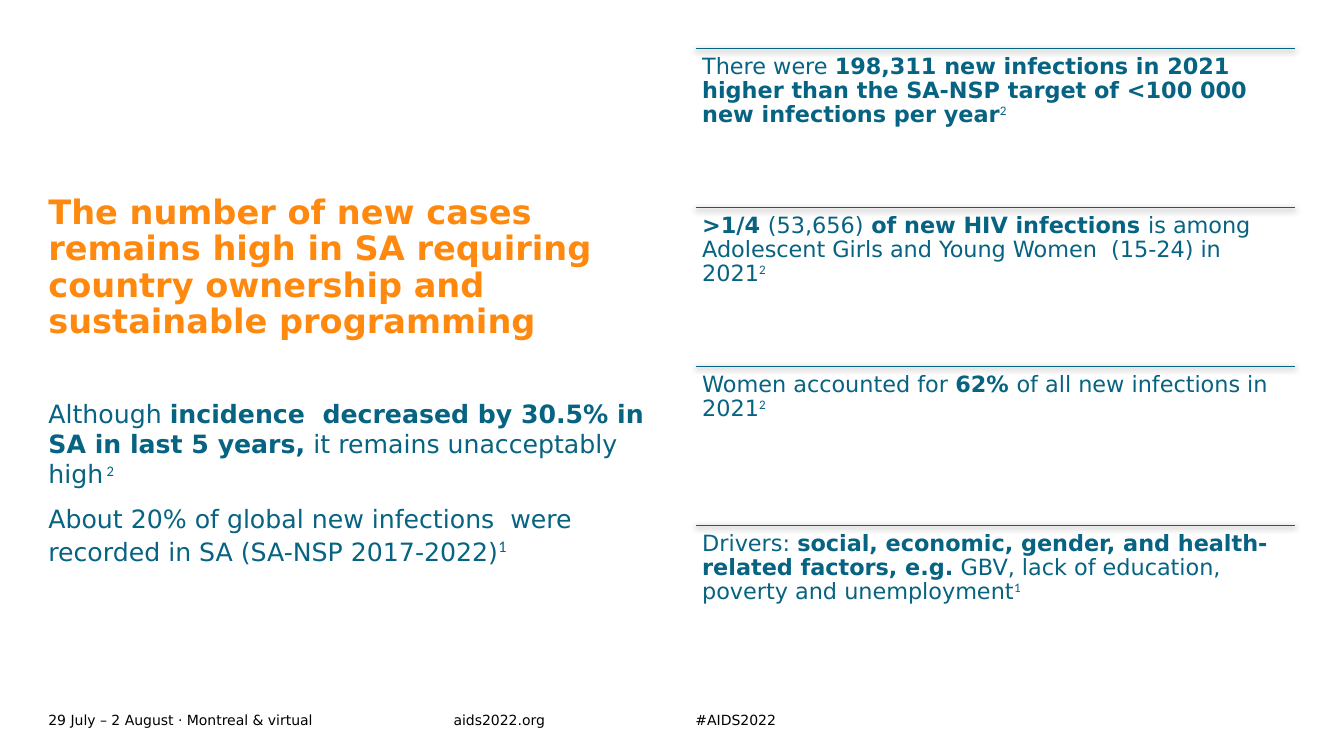
import pptx
import pptx.util
import pptx.dml.color
import pptx.enum.shapes
import pptx.enum.text
import lxml.etree
import pptx.oxml

Pt = pptx.util.Pt
Anchor = pptx.enum.text.MSO_ANCHOR
COLORS = {"teal": "076382", "orange": "FF890E", "black": "000000"}
LEFT, RIGHT, COLUMN = 34.56, 496.8, 428.4
TOP, PITCH = 34.56, 113.5
SHADOW = (
    '<a:effectLst xmlns:a="http://schemas.openxmlformats.org/drawingml/2006/main">'
    '<a:outerShdw blurRad="57150" dist="19050" dir="5400000" algn="ctr" rotWithShape="0">'
    '<a:srgbClr val="000000"><a:alpha val="63000"/></a:srgbClr>'
    '</a:outerShdw></a:effectLst>'
)


def add_text(left, top, width, height, paragraphs, size, color,
             anchor=Anchor.TOP, inset=0, line_spacing=None):
    box = page.shapes.add_textbox(Pt(left), Pt(top), Pt(width), Pt(height))
    frame = box.text_frame
    frame.word_wrap = True
    frame.vertical_anchor = anchor
    frame.margin_left = frame.margin_right = Pt(inset)
    frame.margin_top = frame.margin_bottom = Pt(inset)
    for index, runs in enumerate(paragraphs):
        para = frame.add_paragraph() if index else frame.paragraphs[0]
        if index:
            para.space_before = Pt(10)
        if line_spacing:
            para.line_spacing = line_spacing
        for text, style, *own_size in runs:
            span = para.add_run()
            span.text = text
            span.font.size = Pt(own_size[0] if own_size else size)
            span.font.bold = style == "bold"
            span.font.name = "Calibri" if style == "super" else "DejaVu Sans"
            span.font.color.rgb = pptx.dml.color.RGBColor.from_string(COLORS[color])
            if style == "super":
                span._r.get_or_add_rPr().set("baseline", "30000")


deck = pptx.Presentation()
deck.slide_width, deck.slide_height = Pt(960), Pt(540)
page = deck.slides.add_slide(deck.slide_layouts[6])

footers = [
    (LEFT, 289.4, "29 July – 2 August · Montreal & virtual"),
    (324, 139, "aids2022.org"),
    (RIGHT, 139, "#AIDS2022"),
]
for left, width, text in footers:
    add_text(left, 505.4, width, 17.3, [[(text, "plain")]], 10, "black", Anchor.MIDDLE)

title = "The number of new cases remains high in SA requiring country ownership and sustainable programming"
add_text(LEFT, 131, COLUMN, 112.3, [[(title, "bold")]], 24, "orange",
         Anchor.BOTTOM, line_spacing=0.9)

summary = [
    [("Although ", "plain"),
     ("incidence  decreased by 30.5% in SA in last 5 years,", "bold"),
     (" it remains unacceptably high", "plain"),
     (" 2", "super")],
    [("About 20% of global new infections  were recorded in SA (SA-NSP 2017-2022)", "plain"),
     ("1", "super", 20)],
]
add_text(LEFT, 284.4, COLUMN, 175, summary, 18, "teal")

findings = [
    [("There were ", "plain"),
     ("198,311 new infections in 2021 higher than the SA-NSP target of <100 000 new infections per year", "bold"),
     ("2", "super")],
    [(">1/4 ", "bold"),
     ("(53,656)", "plain"),
     (" of new HIV infections ", "bold"),
     ("is among Adolescent Girls and Young Women  (15-24) in 2021", "plain"),
     ("2", "super")],
    [("Women accounted for ", "plain"),
     ("62% ", "bold"),
     ("of all new infections in 2021", "plain"),
     ("2", "super")],
    [("Drivers: ", "plain"),
     ("social, economic, gender, and health-related factors, e.g.", "bold"),
     (" GBV, lack of education, poverty and unemployment", "plain"),
     ("1", "super")],
]
for row, runs in enumerate(findings):
    top = TOP + row * PITCH
    rule = page.shapes.add_connector(
        pptx.enum.shapes.MSO_CONNECTOR.STRAIGHT,
        Pt(RIGHT), Pt(top), Pt(RIGHT + COLUMN), Pt(top))
    rule.line.width = Pt(0.5)
    rule.line.color.rgb = pptx.dml.color.RGBColor.from_string(COLORS["teal"])
    rule._element.spPr.append(pptx.oxml.parse_xml(SHADOW))
    add_text(RIGHT, top, COLUMN, 113, [runs], 16, "teal", inset=4.8, line_spacing=0.9)

deck.save("out.pptx")
